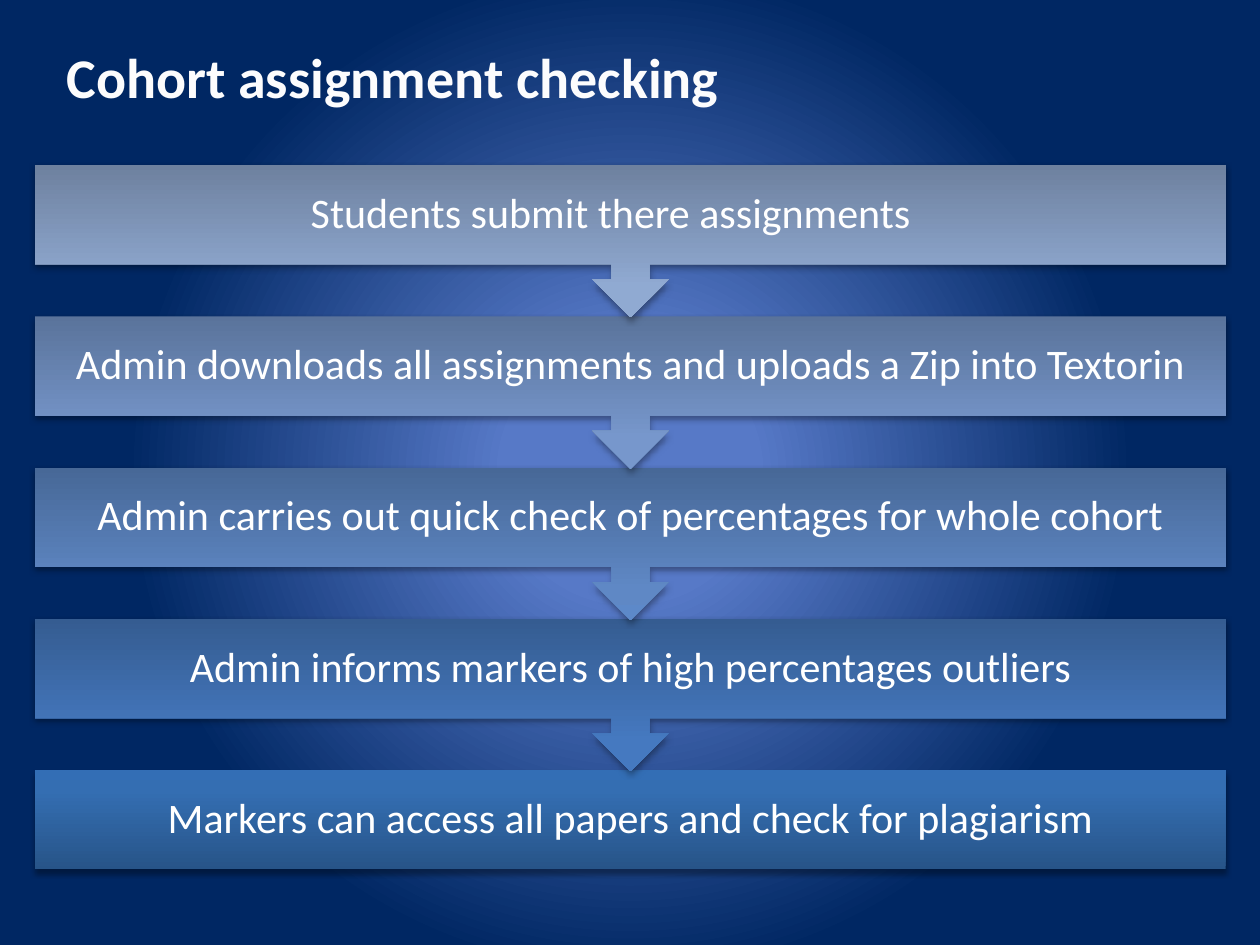
from typing import NamedTuple

from lxml.etree import SubElement
from pptx import Presentation
from pptx.dml.color import RGBColor
from pptx.enum.shapes import MSO_SHAPE as Preset
from pptx.enum.text import MSO_ANCHOR as Anchor, MSO_AUTO_SIZE as AutoSize, PP_ALIGN as Align
from pptx.oxml.ns import qn
from pptx.oxml.xmlchemy import BaseOxmlElement as Element
from pptx.shapes.shapetree import GroupShapes
from pptx.slide import Slide
from pptx.text.text import _Paragraph as Paragraph
from pptx.util import Cm, Pt

COLOURS = {
    "glow": "5779C7",
    "night": "002763",
    "title": "FCFCFD",
    "label": "FFFFFF",
    "shadow": "000000",
}
FONT = "Calibri"
BAR_LEFT, BAR_TOP, BAR_WIDTH, BAR_HEIGHT = Cm(0.71), Cm(3.33), Cm(24), Cm(2)
CALLOUT_HEIGHT, STEP_PITCH, LABEL_INSET = Cm(3.07), Cm(3.05), Cm(0.48)


class Stop(NamedTuple):
    percent: int
    colour: str


class Step(NamedTuple):
    label: str
    shades: tuple[str, str, str]


STEPS = [
    Step("Students submit there assignments\t ", ("6E819F", "90AAD2", "90ABD4")),
    Step("Admin downloads all assignments and uploads a Zip into Textorin",
         ("5A739B", "7797CC", "7698CF")),
    Step("Admin carries out quick check of percentages for whole cohort",
         ("476897", "5F88C5", "5D89C9")),
    Step("Admin informs markers of high percentages outliers",
         ("355C91", "4579C0", "437AC2")),
    Step("Markers can access all papers and check for plagiarism",
         ("275488", "346EB2", "336EB5")),
]


def replace_solid_with_gradient(properties: Element, stops: list[Stop]) -> Element:
    solid = properties.find(qn("a:solidFill"))
    gradient = SubElement(properties, qn("a:gradFill"), rotWithShape="1")
    stop_list = SubElement(gradient, qn("a:gsLst"))
    for stop in stops:
        mark = SubElement(stop_list, qn("a:gs"), pos=str(stop.percent * 1000))
        SubElement(mark, qn("a:srgbClr"), val=stop.colour)
    properties.replace(solid, gradient)
    return gradient


def paint_background(slide: Slide) -> None:
    slide.background.fill.solid()
    slide.background.fill.fore_color.rgb = RGBColor.from_string(COLOURS["night"])
    stops = [Stop(0, COLOURS["glow"]), Stop(16, COLOURS["glow"]),
             Stop(64, COLOURS["night"]), Stop(100, COLOURS["night"])]
    properties = slide.element.find(".//" + qn("p:bgPr"))
    gradient = replace_solid_with_gradient(properties, stops)
    circle = SubElement(gradient, qn("a:path"), path="circle")
    SubElement(circle, qn("a:fillToRect"), l="50000", t="50000", r="50000", b="50000")


def add_run(paragraph: Paragraph, text: str, size: int, colour: str, bold: bool = False) -> None:
    run = paragraph.add_run()
    run.text = text
    run.font.name = FONT
    run.font.size = Pt(size)
    run.font.bold = bold
    run.font.color.rgb = RGBColor.from_string(colour)


def add_bar(flow: GroupShapes, step: Step, top: int, is_last: bool) -> None:
    preset = Preset.RECTANGLE if is_last else Preset.UP_ARROW_CALLOUT
    height = BAR_HEIGHT if is_last else CALLOUT_HEIGHT
    bar = flow.add_shape(preset, BAR_LEFT, top, BAR_WIDTH, height)
    if not is_last:
        bar.rotation = 180
        for index, ratio in enumerate((0.25, 0.25, 0.25, 0.65)):
            bar.adjustments[index] = ratio
    bar.line.fill.background()
    bar.fill.solid()
    properties = bar.element.spPr
    stops = [Stop(*pair) for pair in zip((0, 80, 100), step.shades)]
    gradient = replace_solid_with_gradient(properties, stops)
    SubElement(gradient, qn("a:lin"), ang="16200000", scaled="0")
    bar.shadow.inherit = False
    shadow = SubElement(properties.find(qn("a:effectLst")), qn("a:outerShdw"),
                        blurRad=str(Pt(3.1)), dist=str(Pt(1.8)),
                        dir="5400000", rotWithShape="0")
    shade = SubElement(shadow, qn("a:srgbClr"), val=COLOURS["shadow"])
    SubElement(shade, qn("a:alpha"), val="35000")


def add_label(flow: GroupShapes, text: str, top: int) -> None:
    frame = flow.add_textbox(BAR_LEFT, top, BAR_WIDTH, BAR_HEIGHT).text_frame
    frame.word_wrap = True
    frame.vertical_anchor = Anchor.MIDDLE
    frame.margin_left = frame.margin_right = LABEL_INSET
    frame.margin_top = frame.margin_bottom = LABEL_INSET
    paragraph = frame.paragraphs[0]
    paragraph.alignment = Align.CENTER
    paragraph.line_spacing = 0.9
    add_run(paragraph, text, 24, COLOURS["label"])


def add_title(slide: Slide, text: str) -> None:
    frame = slide.shapes.add_textbox(Cm(1.09), Cm(0.74), Cm(18.21), Cm(1.63)).text_frame
    frame.word_wrap = True
    frame.auto_size = AutoSize.SHAPE_TO_FIT_TEXT
    add_run(frame.paragraphs[0], text, 32, COLOURS["title"], bold=True)


def main() -> None:
    presentation = Presentation()
    presentation.slide_width, presentation.slide_height = Cm(25.4), Cm(19.05)
    slide = presentation.slides.add_slide(presentation.slide_layouts[6])
    paint_background(slide)
    flow = slide.shapes.add_group_shape().shapes
    for index, step in reversed(list(enumerate(STEPS))):
        top = BAR_TOP + index * STEP_PITCH
        add_bar(flow, step, top, is_last=index == len(STEPS) - 1)
        add_label(flow, step.label, top)
    add_title(slide, "Cohort assignment checking")
    presentation.save("out.pptx")


if __name__ == "__main__":
    main()
